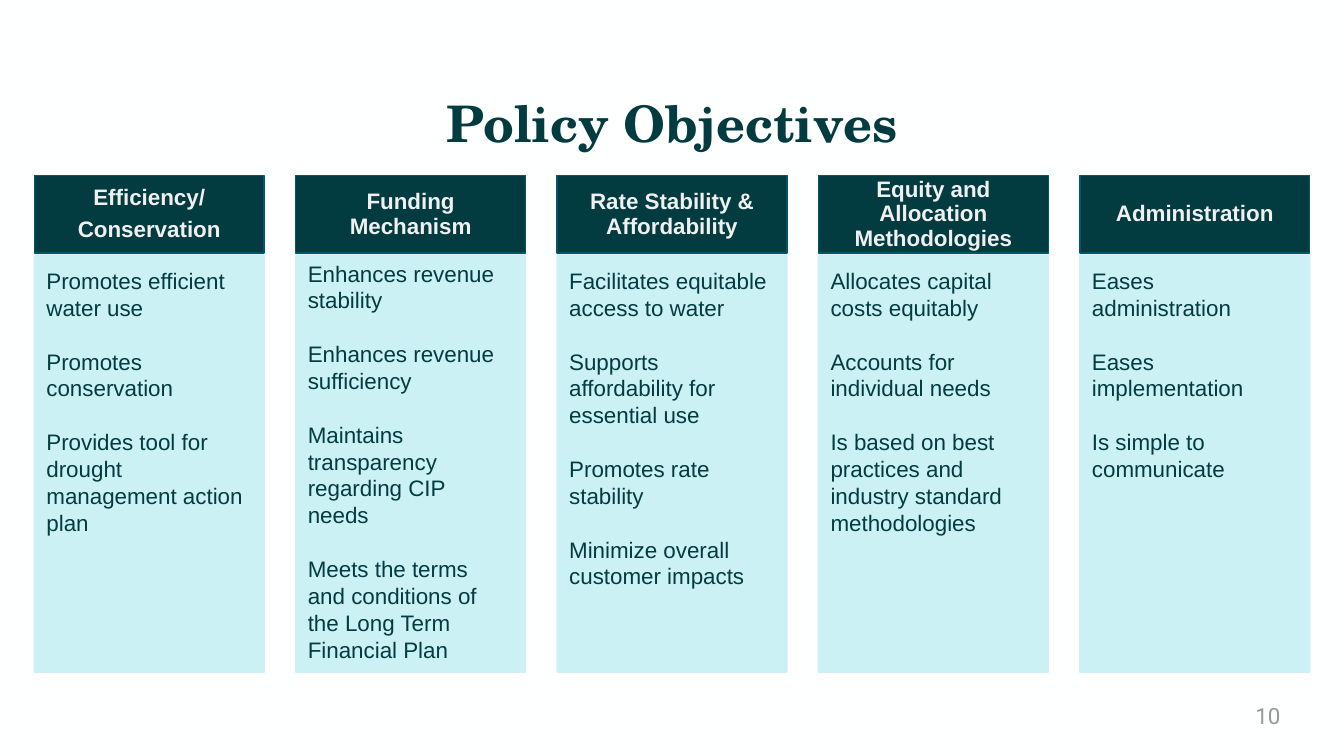
from lxml.etree import SubElement
from pptx import Presentation
from pptx.dml.color import RGBColor
from pptx.enum.shapes import MSO_SHAPE as Shape
from pptx.enum.text import MSO_ANCHOR as Anchor, PP_ALIGN as Align
from pptx.oxml.ns import qn
from pptx.util import Inches, Pt

TITLE = "Policy Objectives"
PAGE = "10"
COLUMNS = [
    (["Efficiency/", "Conservation"], Anchor.TOP, [
        "Promotes efficient water use",
        "Promotes conservation",
        "Provides tool for drought management action plan"]),
    (["Funding Mechanism"], Anchor.MIDDLE, [
        "Enhances revenue stability",
        "Enhances revenue sufficiency",
        "Maintains transparency regarding CIP needs",
        "Meets the terms and conditions of the Long Term Financial Plan"]),
    (["Rate Stability & Affordability"], Anchor.TOP, [
        "Facilitates equitable access to water",
        "Supports affordability for essential use",
        "Promotes rate stability",
        "Minimize overall customer impacts"]),
    (["Equity and Allocation Methodologies"], Anchor.TOP, [
        "Allocates capital costs equitably",
        "Accounts for individual needs",
        "Is based on best practices and industry standard methodologies"]),
    (["Administration"], Anchor.TOP, [
        "Eases administration",
        "Eases implementation",
        "Is simple to communicate"]),
]
COLORS = {"back": "FEFFFF", "dark": "023B40", "edge": "00576C",
          "pale": "C7F0F3", "rim": "CFEDFD", "light": "F0F0F0",
          "grey": "969999"}

WIDE, HIGH = 13.33, 7.5
LEFT, COL = 0.34, 2.28
GAP = (WIDE - 2 * LEFT - len(COLUMNS) * COL) / (len(COLUMNS) - 1)
TOP, HEAD, BODY = 1.74, 0.77, 4.14
SEAM = 0.02


def color(name):
    return RGBColor.from_string(COLORS[name])


def fade(fill):
    """Make a solid fill or line 90 % opaque."""
    for node in fill.iter(qn("a:srgbClr")):
        SubElement(node, qn("a:alpha")).set("val", "90000")


def write(shape, lines, ink, font="Arial", size=16, bold=False,
          align=Align.LEFT, anchor=Anchor.MIDDLE, pads=(0, 0, 0, 0),
          pitch=None, gap=0):
    frame = shape.text_frame
    frame.word_wrap = True
    frame.vertical_anchor = anchor
    (frame.margin_left, frame.margin_top,
     frame.margin_right, frame.margin_bottom) = map(Inches, pads)
    frame.text = "\n".join(lines)
    for i, para in enumerate(frame.paragraphs):
        para.alignment = align
        para.space_before = Pt(gap if i else 0)
        para.space_after = Pt(0)
        if pitch:
            para.line_spacing = Pt(pitch)
        for run in para.runs:
            run.font.name, run.font.size = font, Pt(size)
            run.font.bold = bold
            run.font.color.rgb = color(ink)


def panel(slide, x, y, high, fill, line):
    box = slide.shapes.add_shape(
        Shape.RECTANGLE, *map(Inches, (x, y, COL, high)))
    box.shadow.inherit = False
    box.fill.solid()
    box.fill.fore_color.rgb = color(fill)
    box.line.color.rgb = color(line)
    box.line.width = Pt(1)
    return box


def main():
    deck = Presentation()
    deck.slide_width, deck.slide_height = Inches(WIDE), Inches(HIGH)
    slide = deck.slides.add_slide(deck.slide_layouts[5])
    slide.background.fill.solid()
    slide.background.fill.fore_color.rgb = color("back")

    title = slide.shapes.title
    title.left, title.top = Inches(1.1), Inches(0.64)
    title.width, title.height = Inches(WIDE - 2.2), Inches(0.87)
    write(title, [TITLE], "dark", "TeX Gyre Schola", 36, True,
          Align.CENTER, Anchor.BOTTOM, (0, 0.21, 0, 0))

    for i, (name, anchor, goals) in enumerate(COLUMNS):
        x = LEFT + i * (COL + GAP)
        head = panel(slide, x, TOP, HEAD, "dark", "edge")
        write(head, name, "light", bold=True, align=Align.CENTER,
              pads=(0.15, 0.08, 0.15, 0.08), pitch=17.5, gap=5.4)
        body = panel(slide, x, TOP + HEAD + SEAM, BODY, "pale", "rim")
        fade(body.element.spPr)
        write(body, goals, "dark", anchor=anchor,
              pads=(0.12, 0.12, 0.16, 0.17), pitch=19.2, gap=19.2)

    number = slide.shapes.add_textbox(
        *map(Inches, (WIDE - 3.5, 6.9, 3, 0.4)))
    write(number, [PAGE], "grey", "Roboto", align=Align.RIGHT,
          pads=(0.13, 0.07, 0.13, 0.07))
    deck.save("out.pptx")


if __name__ == "__main__":
    main()
